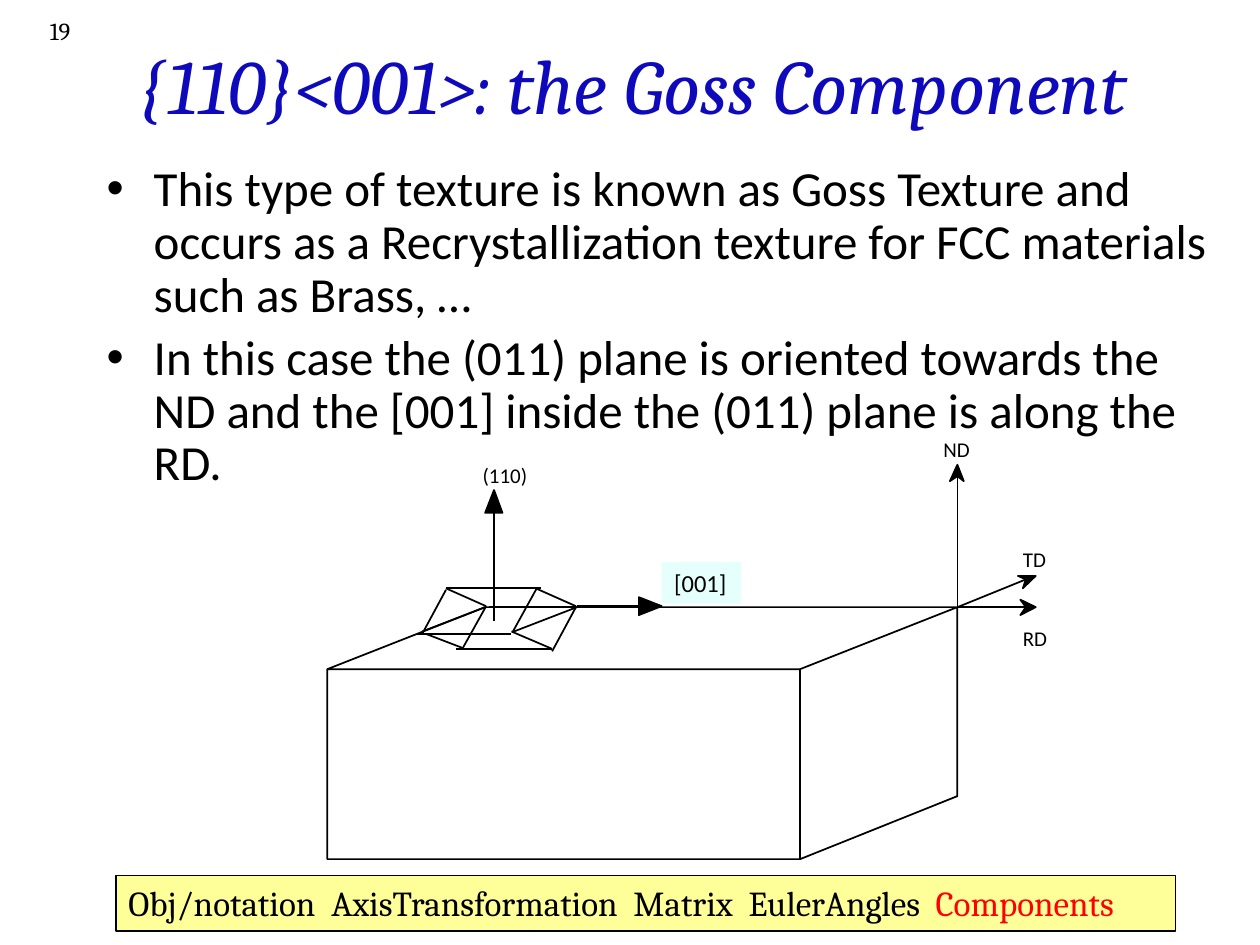
from lxml.etree import SubElement
from pptx import Presentation
from pptx.dml.color import RGBColor
from pptx.enum.shapes import MSO_CONNECTOR, MSO_SHAPE
from pptx.enum.text import MSO_ANCHOR, MSO_AUTO_SIZE, PP_ALIGN
from pptx.oxml.ns import qn
from pptx.util import Cm, Pt

COLOURS = {
    "ink": "000000",
    "title": "0E0ABC",
    "paper": "FFFFFF",
    "footer": "FFFF99",
    "label": "E5FFFD",
    "current": "FF0000",
}

deck = Presentation()
deck.slide_width, deck.slide_height = Cm(25.4), Cm(19.05)
page = deck.slides.add_slide(deck.slide_layouts[6])


def add_text(text, at, size=12, font="Calibri", colour="ink", italic=False,
             align=PP_ALIGN.LEFT, anchor=MSO_ANCHOR.TOP, wrap=True,
             margins=(0.25, 0.13), fill=None, outline=None):
    """Add a rectangle of text; each line of the text is a paragraph."""
    left, top, width, height = (Cm(value) for value in at)
    if fill:
        box = page.shapes.add_shape(MSO_SHAPE.RECTANGLE, left, top, width, height)
        box.shadow.inherit = False
        box.fill.solid()
        box.fill.fore_color.rgb = RGBColor.from_string(COLOURS[fill])
        if outline:
            box.line.color.rgb = RGBColor.from_string(COLOURS["ink"])
            box.line.width = Pt(outline)
        else:
            box.line.fill.background()
    else:
        box = page.shapes.add_textbox(left, top, width, height)
    frame = box.text_frame
    frame.word_wrap = wrap
    if not wrap:
        frame.auto_size = MSO_AUTO_SIZE.SHAPE_TO_FIT_TEXT
    frame.vertical_anchor = anchor
    frame.margin_left = frame.margin_right = Cm(margins[0])
    frame.margin_top = frame.margin_bottom = Cm(margins[1])
    frame.text = text
    for para in frame.paragraphs:
        para.alignment = align
        for span in para.runs:
            span.font.size = Pt(size)
            span.font.name = font
            span.font.italic = italic
            span.font.color.rgb = RGBColor.from_string(COLOURS[colour])
    return box


def add_path(points, fill=None):
    """Draw a closed filled outline, or a straight line when there is no fill."""
    corners = [(Cm(x), Cm(y)) for x, y in points]
    if fill:
        builder = page.shapes.build_freeform(*corners[0])
        builder.add_line_segments(corners[1:], close=True)
        path = builder.convert_to_shape()
        path.shadow.inherit = False
        path.fill.solid()
        path.fill.fore_color.rgb = RGBColor.from_string(COLOURS[fill])
    else:
        path = page.shapes.add_connector(MSO_CONNECTOR.STRAIGHT, *corners[0], *corners[1])
        SubElement(path._element.spPr, qn("a:effectLst"))
    path.line.color.rgb = RGBColor.from_string(COLOURS["ink"])
    path.line.width = Pt(1)


# Slide number and title
add_text("19", (0.2, 0.2, 1.47, 1.07), size=14, font="Cambria", align=PP_ALIGN.RIGHT)
add_text("{110}<001>: the Goss Component", (0.38, 0.2, 24.77, 2.97), size=44,
         font="Cambria", colour="title", italic=True, align=PP_ALIGN.CENTER,
         anchor=MSO_ANCHOR.MIDDLE)

# Bulleted description
body = add_text(
    "This type of texture is known as Goss Texture and occurs as a "
    "Recrystallization texture for FCC materials such as Brass, …\n"
    "In this case the (011) plane is oriented towards the ND and the [001] "
    "inside the (011) plane is along the RD.",
    (1.9, 3.18, 23.06, 12.9), size=28)
for para in body.text_frame.paragraphs:
    para.line_spacing = 0.9
    para.space_before = Pt(5.6)
    properties = para._p.get_or_add_pPr()
    properties.set("marL", str(Cm(0.95)))
    properties.set("indent", str(Cm(-0.95)))
    SubElement(properties, qn("a:buFont"), typeface="Arial")
    SubElement(properties, qn("a:buChar"), char="•")

# Sheet of material
left, front, right = 6.6, 16.13, 19.3
back, top, bottom = 12.24, 13.49, 17.32
add_path([(front, top), (left, top), (front, top), (front, bottom), (front, top),
          (right, back), (right, 16.05), (front, bottom), (left, bottom),
          (left, top), (9.78, back), (right, back)], fill="paper")

# Unit cell edges
cell_edges = [
    (9.86, 12.24, 11.73, 12.24), (8.41, 12.78, 10.31, 12.78),
    (8.99, 11.86, 10.9, 11.86), (9.19, 13.08, 11.13, 13.08),
    (8.51, 12.78, 8.99, 11.89), (10.34, 12.73, 10.82, 11.86),
    (9.32, 13.08, 9.8, 12.22), (11.13, 13.13, 11.61, 12.24),
    (8.99, 11.86, 9.8, 12.22), (8.59, 12.78, 9.32, 13.06),
    (10.31, 12.73, 11.13, 13.08), (10.8, 11.86, 11.61, 12.22),
    (8.51, 12.73, 9.78, 12.24), (10.36, 12.73, 11.63, 12.24),
]
for x1, y1, x2, y2 in cell_edges:
    add_path([(x1, y1), (x2, y2)])

# Arrows: start of the shaft, then the head, whose third point ends the shaft
corner = (right, back)
arrows = [
    (corner, [(20.88, 12.24), (20.57, 12.4), (20.68, 12.24), (20.57, 12.09)]),
    (corner, [(19.3, 9.37), (19.43, 9.7), (19.3, 9.6), (19.15, 9.7)]),
    (corner, [(20.88, 11.61), (20.62, 11.86), (20.68, 11.68), (20.52, 11.61)]),
    ((9.96, 12.52), [(9.96, 9.88), (10.13, 10.34), (9.96, 10.34), (9.78, 10.34)]),
    ((11.63, 12.22), [(13.34, 12.22), (12.88, 12.4), (12.88, 12.22), (12.88, 12.04)]),
]
for start, head in arrows:
    add_path(head, fill="ink")
    add_path([start, head[2]])

# Axis and plane labels
labels = [("RD", 20.62, 12.62, 0.55), ("ND", 19.02, 8.81, 0.6),
          ("TD", 20.62, 11.02, 0.55), ("(110)", 9.73, 9.32, 0.95)]
for text, x, y, width in labels:
    add_text(text, (x, y, width, 0.51), wrap=False, margins=(0, 0))

# Topic bar, its entries set on tab stops
footer = add_text("Obj/notation\tAxisTransformation\tMatrix\tEulerAngles\t",
                  (2.34, 17.65, 21.36, 1.12), size=20, font="Cambria",
                  fill="footer", outline=0.75)
para = footer.text_frame.paragraphs[0]
tabs = SubElement(para._p.get_or_add_pPr(), qn("a:tabLst"))
for stop in (4.09, 10.18, 12.5, 16.27):
    SubElement(tabs, qn("a:tab"), pos=str(Cm(stop)), algn="l")
span = para.add_run()
span.text = "Components"
span.font.size = Pt(20)
span.font.name = "Cambria"
span.font.color.rgb = RGBColor.from_string(COLOURS["current"])

# Direction label
add_text("[001]", (13.34, 11.33, 1.6, 0.84), size=14, wrap=False, fill="label")

deck.save("out.pptx")
